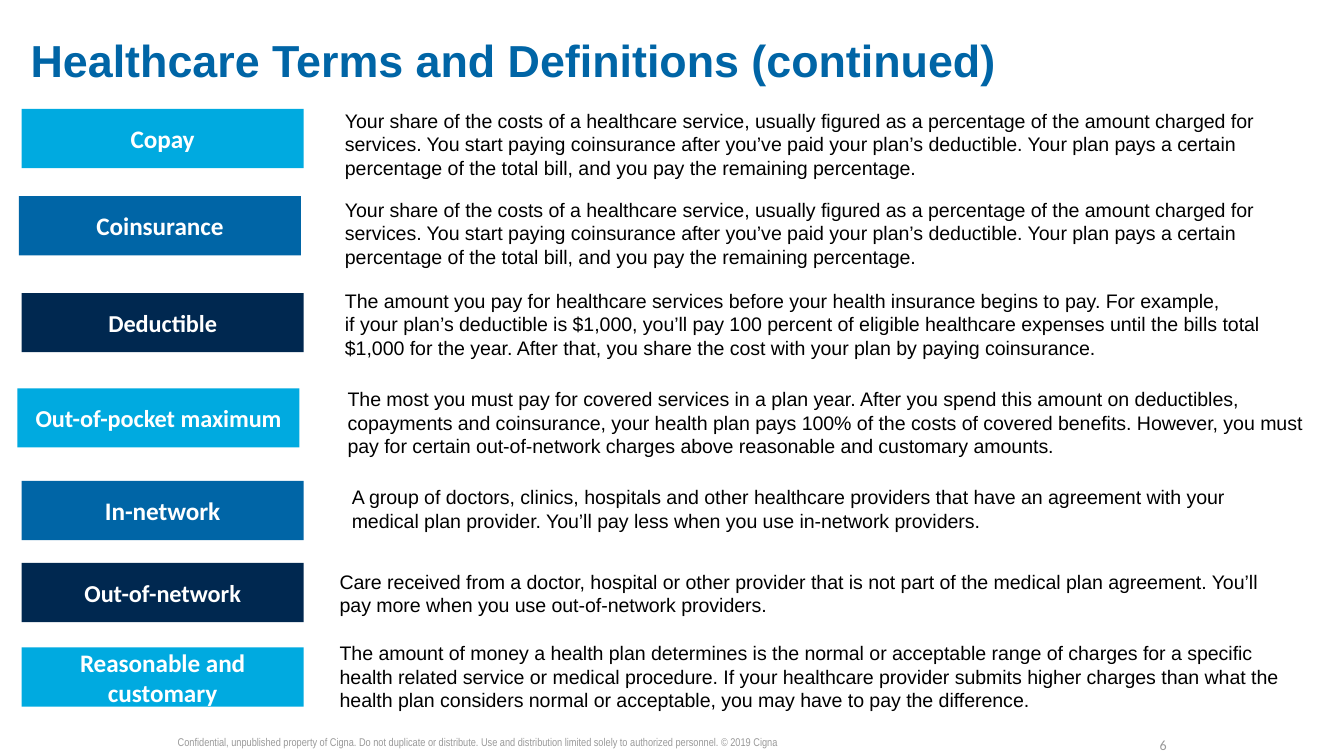
from dataclasses import dataclass
from itertools import cycle

from pptx import Presentation
from pptx.dml.color import RGBColor
from pptx.enum import shapes, text
from pptx.util import Cm, Pt

TITLE = "Healthcare Terms and Definitions (continued)"
FOOTER = (
    "Confidential, unpublished property of Cigna. Do not duplicate or distribute. "
    "Use and distribution limited solely to authorized personnel. © 2019 Cigna"
)
PAGE_NUMBER = "6"

SHARE_START = (
    "Your share of the costs of a healthcare service, usually figured as a "
    "percentage of the amount charged for"
)
SHARE_END = (
    "services. You start paying coinsurance after you’ve paid your plan’s deductible. "
    "Your plan pays a certain percentage of the total bill, and you pay the "
    "remaining percentage."
)

# term, size, label (left, top), definition (left, top, width, height), paragraphs
TERMS = [
    ("Copay", 13.5, (0.41, 2.06), (6.27, 1.93, 17.83, 1.37),
     [f"{SHARE_START} {SHARE_END}"]),
    ("Coinsurance", 13.5, (0.36, 3.71), (6.27, 3.61, 18.24, 1.52),
     [SHARE_START, SHARE_END]),
    ("Deductible", 13, (0.41, 5.54), (6.27, 5.33, 18.08, 1.6),
     ["The amount you pay for healthcare services before your health insurance "
      "begins to pay. For example,",
      "if your plan’s deductible is $1,000, you’ll pay 100 percent of eligible "
      "healthcare expenses until the bills total $1,000 for the year. After that, "
      "you share the cost with your plan by paying coinsurance."]),
    ("Out-of-pocket maximum", 13, (0.33, 7.34), (6.32, 7.19, 18.67, 1.57),
     ["The most you must pay for covered services in a plan year. After you spend "
      "this amount on deductibles, copayments and coinsurance, your health plan pays "
      "100% of the costs of covered benefits. However, you must pay for certain "
      "out-of-network charges above reasonable and customary amounts."]),
    ("In-network", 13.5, (0.41, 9.09), (6.4, 9.04, 17.6, 1.14),
     ["A group of doctors, clinics, hospitals and other healthcare providers that "
      "have an agreement with your medical plan provider. You’ll pay less when you "
      "use in-network providers."]),
    ("Out-of-network", 13, (0.41, 10.64), (6.17, 10.64, 18.42, 1.14),
     ["Care received from a doctor, hospital or other provider that is not part of "
      "the medical plan agreement. You’ll pay more when you use out-of-network "
      "providers."]),
    ("Reasonable and customary", 13.5, (0.41, 12.24), (6.17, 11.99, 18.42, 1.57),
     ["The amount of money a health plan determines is the normal or acceptable range "
      "of charges for a specific health related service or medical procedure. If your "
      "healthcare provider submits higher charges than what the health plan considers "
      "normal or acceptable, you may have to pay the difference."]),
]
LABEL_SIZE = (5.33, 1.12)


@dataclass(frozen=True)
class Theme:
    heading: str = "0065A6"
    label_fills: tuple = ("00AAE0", "0065A6", "002850")
    label_text: str = "FFFFFF"
    body: str = "000000"
    muted: str = "999999"
    heading_size: float = 24
    body_size: float = 10.5
    number_size: float = 7.5
    footer_size: float = 6
    body_font: str = "Arial"
    label_font: str = "Calibri"
    footer_font: str = "Arial Narrow"


THEME = Theme()


def write(box, paragraphs, font, size, colour, bold=False,
          align=text.PP_ALIGN.LEFT, anchor=text.MSO_ANCHOR.TOP, insets=(0.25, 0.13)):
    frame = box.text_frame
    frame.text = "\n".join(paragraphs)
    frame.word_wrap = True
    frame.vertical_anchor = anchor
    frame.margin_left = frame.margin_right = Cm(insets[0])
    frame.margin_top = frame.margin_bottom = Cm(insets[1])
    for para in frame.paragraphs:
        para.alignment = align
        for span in para.runs:
            span.font.name = font
            span.font.size = Pt(size)
            span.font.bold = bold
            span.font.color.rgb = RGBColor.from_string(colour)


def add_text(page, place, paragraphs, *style, **options):
    box = page.shapes.add_textbox(*map(Cm, place))
    write(box, paragraphs, *style, **options)


def add_label(page, place, term, size, fill):
    box = page.shapes.add_shape(shapes.MSO_SHAPE.RECTANGLE, *map(Cm, place))
    box.shadow.inherit = False
    box.fill.solid()
    box.fill.fore_color.rgb = RGBColor.from_string(fill)
    box.line.fill.background()
    write(box, [term], THEME.label_font, size, THEME.label_text, bold=True,
          align=text.PP_ALIGN.CENTER, anchor=text.MSO_ANCHOR.MIDDLE)


def main():
    deck = Presentation()
    deck.slide_width, deck.slide_height = Cm(25.4), Cm(14.29)
    page = deck.slides.add_slide(deck.slide_layouts[6])

    add_text(page, (0.33, 0.46, 22.86, 1.35), [TITLE], THEME.body_font,
             THEME.heading_size, THEME.heading, bold=True,
             anchor=text.MSO_ANCHOR.MIDDLE)
    add_text(page, (17.78, 13.82, 4.45, 0.43), [PAGE_NUMBER], THEME.label_font,
             THEME.number_size, THEME.muted, align=text.PP_ALIGN.RIGHT,
             insets=(0.18, 0.1))
    add_text(page, (3.18, 13.79, 14.6, 0.48), [FOOTER], THEME.footer_font,
             THEME.footer_size, THEME.muted, insets=(0.18, 0.1))

    for (term, size, corner, place, definition), fill in zip(TERMS, cycle(THEME.label_fills)):
        add_label(page, corner + LABEL_SIZE, term, size, fill)
        add_text(page, place, definition, THEME.body_font, THEME.body_size, THEME.body)

    deck.save("out.pptx")


if __name__ == "__main__":
    main()
